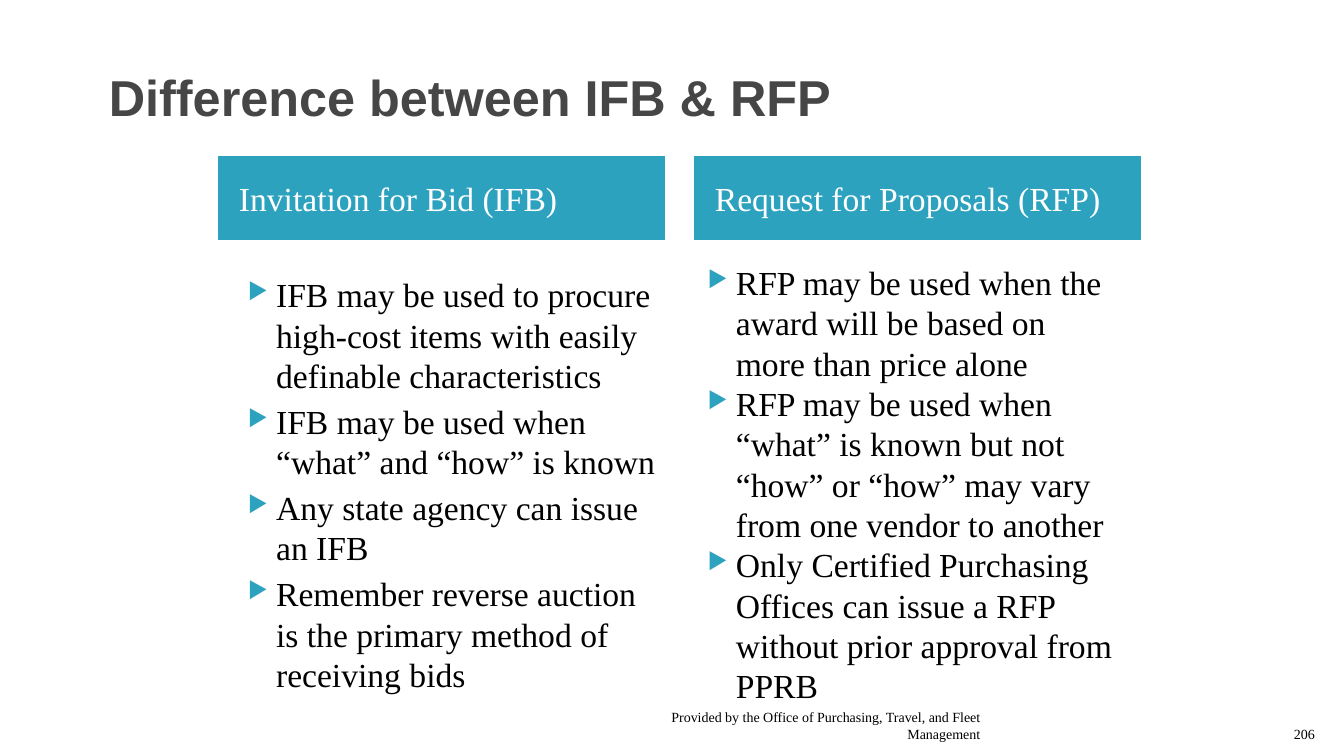
import pptx
import pptx.dml.color
import pptx.enum.shapes
import pptx.enum.text
import pptx.util
from lxml import etree
from pptx.util import Inches, Pt

# Content
TITLE = "Difference between IFB & RFP"
COLUMNS = [
    {
        "heading": "Invitation for Bid (IFB)",
        "heading_left": 2.17,
        "points_at": (2.24, 2.67),
        "gap": 4,
        "points": [
            "IFB may be used to procure high-cost items with easily definable characteristics",
            "IFB may be used when “what” and “how” is known",
            "Any state agency can issue an IFB",
            "Remember reverse auction is the primary method of receiving bids",
        ],
    },
    {
        "heading": "Request for Proposals (RFP)",
        "heading_left": 6.89,
        "points_at": (6.8, 2.55),
        "gap": 0,
        "points": [
            "RFP may be used when the award will be based on more than price alone",
            "RFP may be used when “what” is known but not “how” or “how” may vary "
            "from one vendor to another",
            "Only Certified Purchasing Offices can issue a RFP without prior approval from PPRB",
        ],
    },
]
FOOTERS = [  # text, left, width
    ("Provided by the Office of Purchasing, Travel, and Fleet Management", 6.39, 3.43),
    ("206", 12.61, 0.53),
]

# Style
COLORS = {"title": "464646", "accent": "2DA2BF", "heading": "FFFFFF", "body": "000000"}
SERIF = "Times New Roman"
COLUMN_WIDTH = 4.42
ANCHOR = pptx.enum.text.MSO_ANCHOR
ALIGN = pptx.enum.text.PP_ALIGN


def color(name):
    return pptx.dml.color.RGBColor.from_string(COLORS[name])


def style(paragraph, size, color_name, face=SERIF, bold=False):
    font = paragraph.font
    font.name, font.size, font.bold = face, Pt(size), bold
    font.color.rgb = color(color_name)


def add_text(slide, left, top, width, height, anchor):
    frame = slide.shapes.add_textbox(
        Inches(left), Inches(top), Inches(width), Inches(height)).text_frame
    frame.word_wrap = True
    frame.vertical_anchor = anchor
    return frame


def add_bullet(paragraph):
    props = paragraph._p.get_or_add_pPr()
    props.set("marL", str(Inches(0.4)))
    props.set("indent", str(Inches(-0.28)))
    ns = "{http://schemas.openxmlformats.org/drawingml/2006/main}"
    bullet_color = etree.SubElement(props, ns + "buClr")
    etree.SubElement(bullet_color, ns + "srgbClr", val=COLORS["accent"])
    etree.SubElement(props, ns + "buSzPct", val="68000")
    etree.SubElement(props, ns + "buFont", typeface="OpenSymbol")
    etree.SubElement(props, ns + "buChar", char="▶")


def add_heading(slide, text, left):
    banner = slide.shapes.add_shape(
        pptx.enum.shapes.MSO_SHAPE.RECTANGLE,
        Inches(left), Inches(1.55), Inches(COLUMN_WIDTH), Inches(0.83))
    banner.shadow.inherit = False
    banner.fill.solid()
    banner.fill.fore_color.rgb = color("accent")
    banner.line.color.rgb = color("accent")
    banner.line.width = Pt(0.75)
    frame = banner.text_frame
    frame.word_wrap = True
    frame.margin_left = Inches(0.2)
    frame.vertical_anchor = ANCHOR.MIDDLE
    frame.text = text
    frame.paragraphs[0].alignment = ALIGN.LEFT
    style(frame.paragraphs[0], 24, "heading")


def add_points(slide, points, left, top, gap):
    frame = add_text(slide, left, top, COLUMN_WIDTH, 4.31, ANCHOR.TOP)
    for index, point in enumerate(points):
        paragraph = frame.add_paragraph() if index else frame.paragraphs[0]
        paragraph.text = point
        if index:
            paragraph.space_before = Pt(gap)
        add_bullet(paragraph)
        style(paragraph, 24, "body")


def main():
    deck = pptx.Presentation()
    deck.slide_width, deck.slide_height = Inches(13.33), Inches(7.5)
    slide = deck.slides.add_slide(deck.slide_layouts[6])

    # Title
    title = add_text(slide, 0.67, 0.33, 12, 1.25, ANCHOR.MIDDLE)
    title.margin_left = Inches(0.41)
    title.text = TITLE
    style(title.paragraphs[0], 36, "title", face="Arial", bold=True)

    # Two compared columns
    for column in COLUMNS:
        add_heading(slide, column["heading"], column["heading_left"])
        add_points(slide, column["points"], *column["points_at"], column["gap"])

    # Credit and page number
    for text, left, width in FOOTERS:
        footer = add_text(slide, left, 7.01, width, 0.4, ANCHOR.BOTTOM)
        footer.text = text
        footer.paragraphs[0].alignment = ALIGN.RIGHT
        style(footer.paragraphs[0], 10, "body")

    deck.save("out.pptx")


if __name__ == "__main__":
    main()
